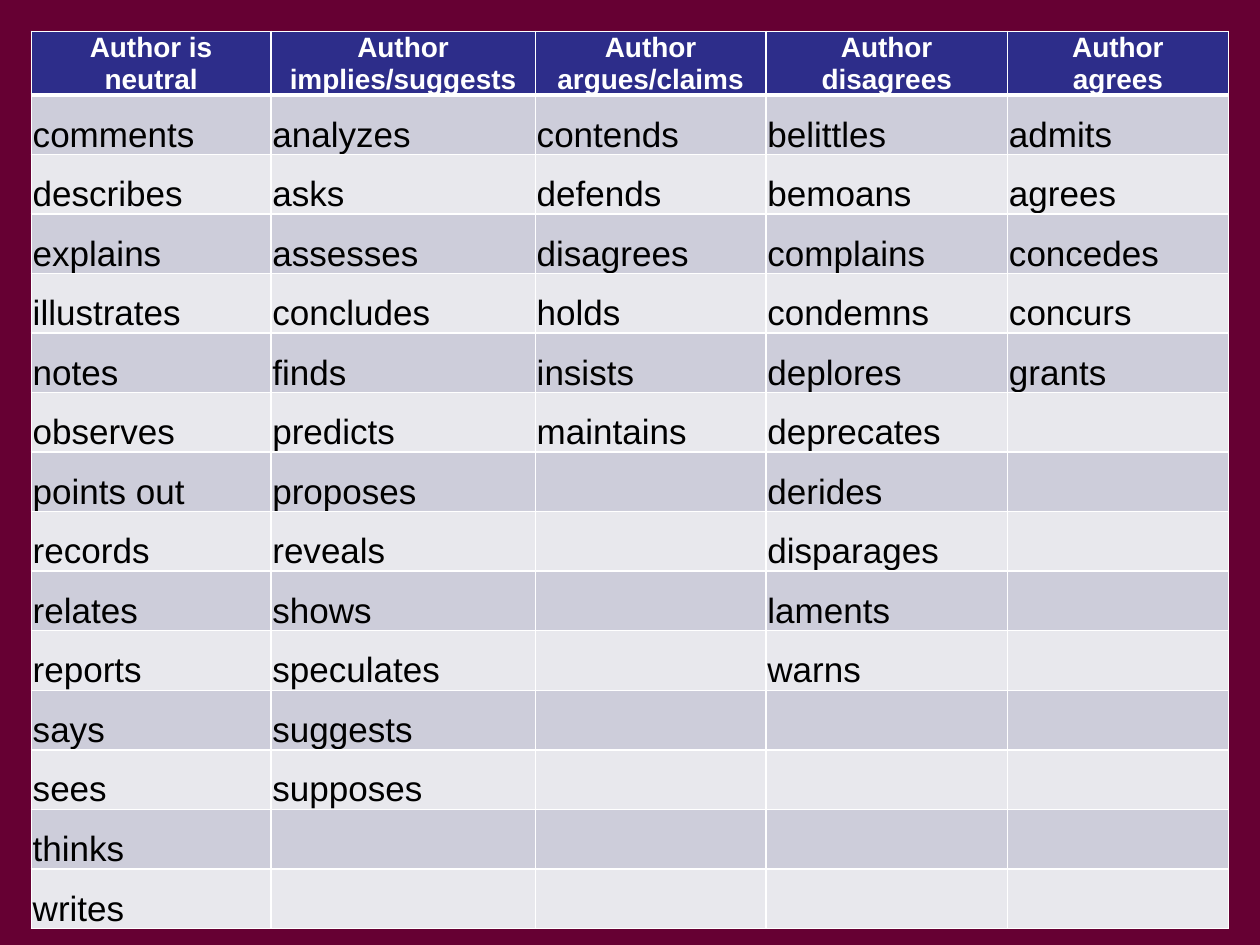
import pptx
import pptx.dml.color
import pptx.enum.text
import pptx.oxml.ns
import pptx.util
from lxml import etree

Cm = pptx.util.Cm
Pt = pptx.util.Pt
COLUMNS = [
    (4.83, ["Author is", "neutral"],
     ["comments", "describes", "explains", "illustrates", "notes", "observes", "points out",
      "records", "relates", "reports", "says", "sees", "thinks", "writes"]),
    (5.33, ["Author", "implies/suggests"],
     ["analyzes", "asks", "assesses", "concludes", "finds", "predicts", "proposes",
      "reveals", "shows", "speculates", "suggests", "supposes"]),
    (4.65, ["Author", "argues/claims"],
     ["contends", "defends", "disagrees", "holds", "insists", "maintains"]),
    (4.87, ["Author", "disagrees"],
     ["belittles", "bemoans", "complains", "condemns", "deplores", "deprecates", "derides",
      "disparages", "laments", "warns"]),
    (4.45, ["Author", "agrees"],
     ["admits", "agrees", "concedes", "concurs", "grants"]),
]
BANDS = ["CDCDDA", "E8E8ED"]


def rgb(value):
    return pptx.dml.color.RGBColor.from_string(value)


def set_fill(fill, color):
    fill.solid()
    fill.fore_color.rgb = rgb(color)


def set_borders(cell, top=1, bottom=1):
    tc_pr = cell._tc.get_or_add_tcPr()
    qn = pptx.oxml.ns.qn
    widths = [("L", 1), ("R", 1), ("T", top), ("B", bottom)]
    for i, (side, width) in enumerate(widths):
        ln = etree.Element(qn(f"a:ln{side}"), w=str(Pt(width)))
        fill = etree.SubElement(ln, qn("a:solidFill"))
        etree.SubElement(fill, qn("a:srgbClr"), val="FFFFFF")
        tc_pr.insert(i, ln)


def format_cell(cell, color):
    set_fill(cell.fill, color)
    cell.margin_left = cell.margin_right = cell.margin_top = Cm(0.03)
    cell.margin_bottom = 0
    cell.vertical_anchor = pptx.enum.text.MSO_ANCHOR.BOTTOM


def write_cell(cell, lines, size, color, bold, align):
    tf = cell.text_frame
    tf.text = "\n".join(lines)
    for p in tf.paragraphs:
        p.alignment = align
        p.font.name = "Arial"
        p.font.size = Pt(size)
        p.font.bold = bold
        p.font.color.rgb = rgb(color)


def add_verb_table(s):
    align = pptx.enum.text.PP_ALIGN
    row_count = 1 + max(len(verbs) for _, _, verbs in COLUMNS)
    width = sum(w for w, _, _ in COLUMNS)
    table = s.shapes.add_table(row_count, len(COLUMNS), Cm(0.63), Cm(0.63),
                               Cm(width), Cm(1.2 * row_count)).table
    for row in table.rows:
        row.height = Cm(1.2)
    for c, (w, heading, verbs) in enumerate(COLUMNS):
        table.columns[c].width = Cm(w)
        head = table.cell(0, c)
        format_cell(head, "2D2D8A")
        set_borders(head, bottom=3)
        write_cell(head, heading, 16, "FFFFFF", True, align.CENTER)
        for r in range(1, row_count):
            cell = table.cell(r, c)
            format_cell(cell, BANDS[(r - 1) % 2])
            set_borders(cell, top=3 if r == 1 else 1)
            if r <= len(verbs):
                write_cell(cell, [verbs[r - 1]], 20, "000000", False, align.LEFT)


def main():
    prs = pptx.Presentation()
    prs.slide_width, prs.slide_height = Cm(25.4), Cm(19.05)
    s = prs.slides.add_slide(prs.slide_layouts[6])
    set_fill(s.background.fill, "660033")
    add_verb_table(s)
    prs.save("out.pptx")


if __name__ == "__main__":
    main()
